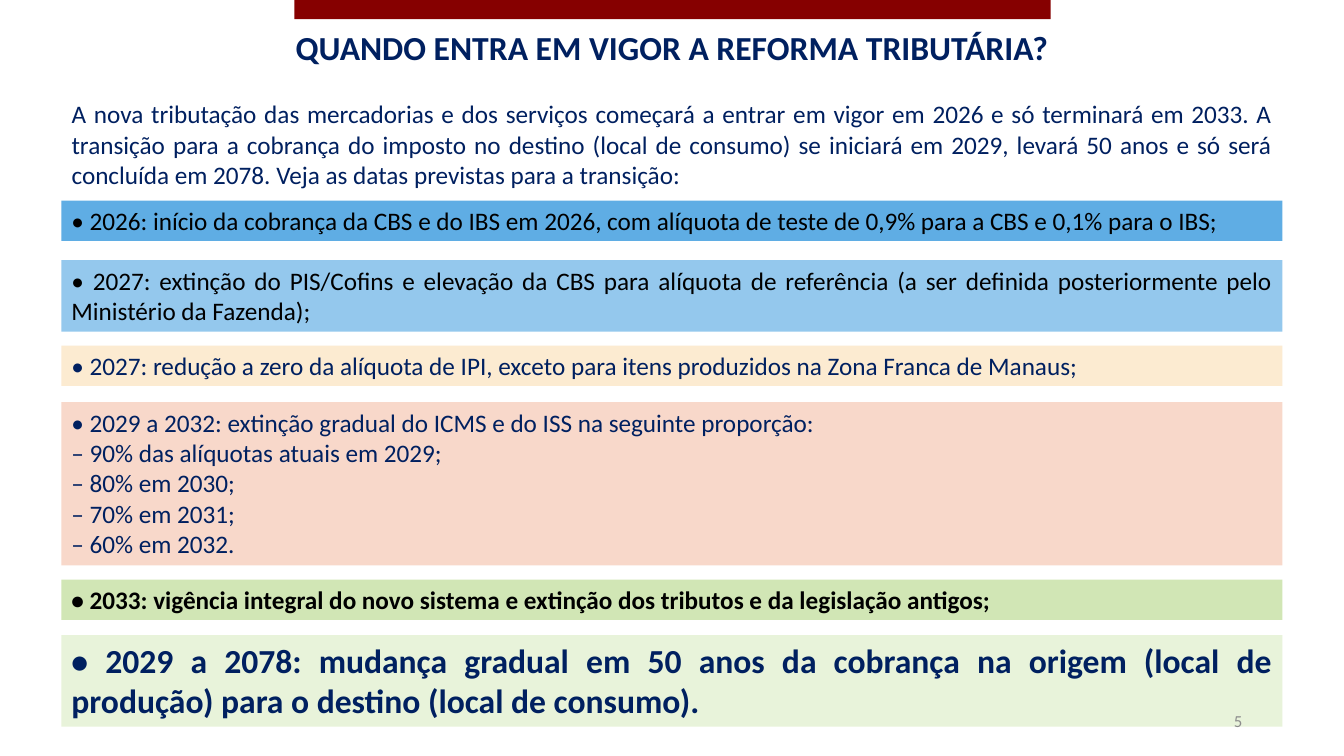
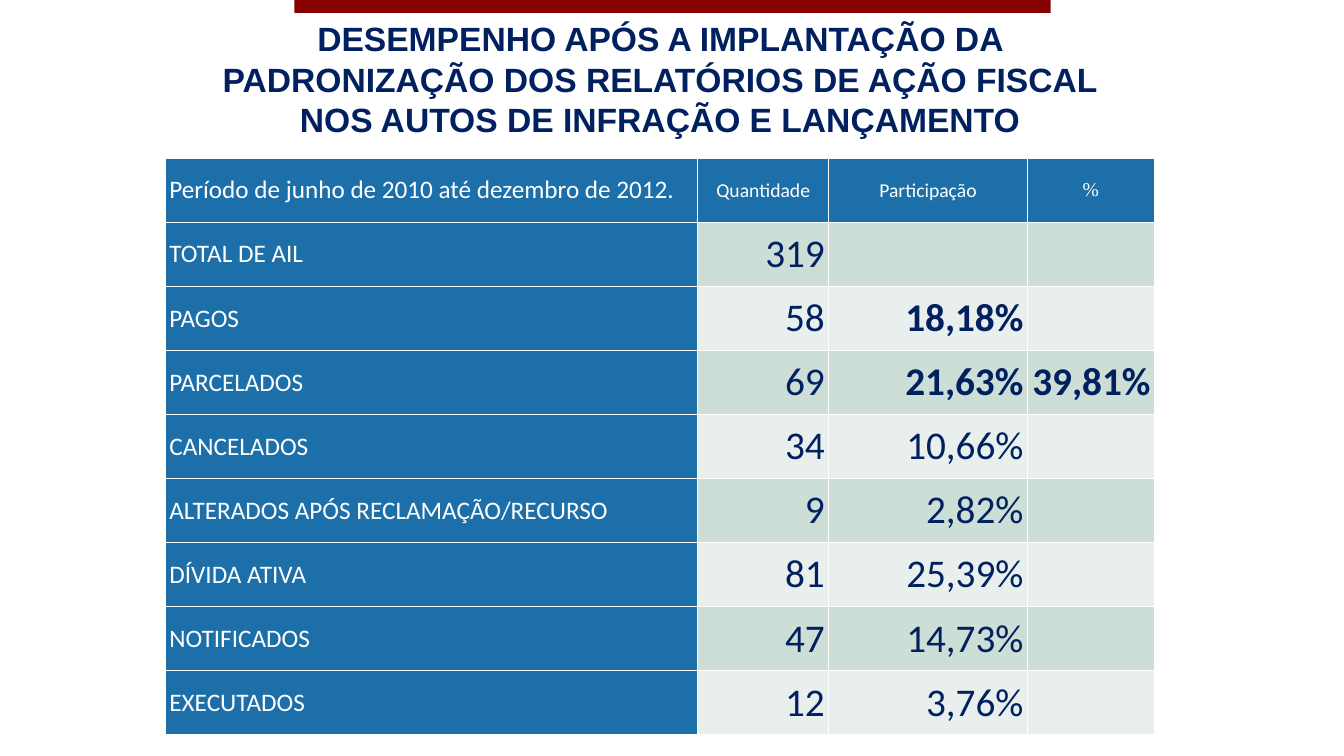
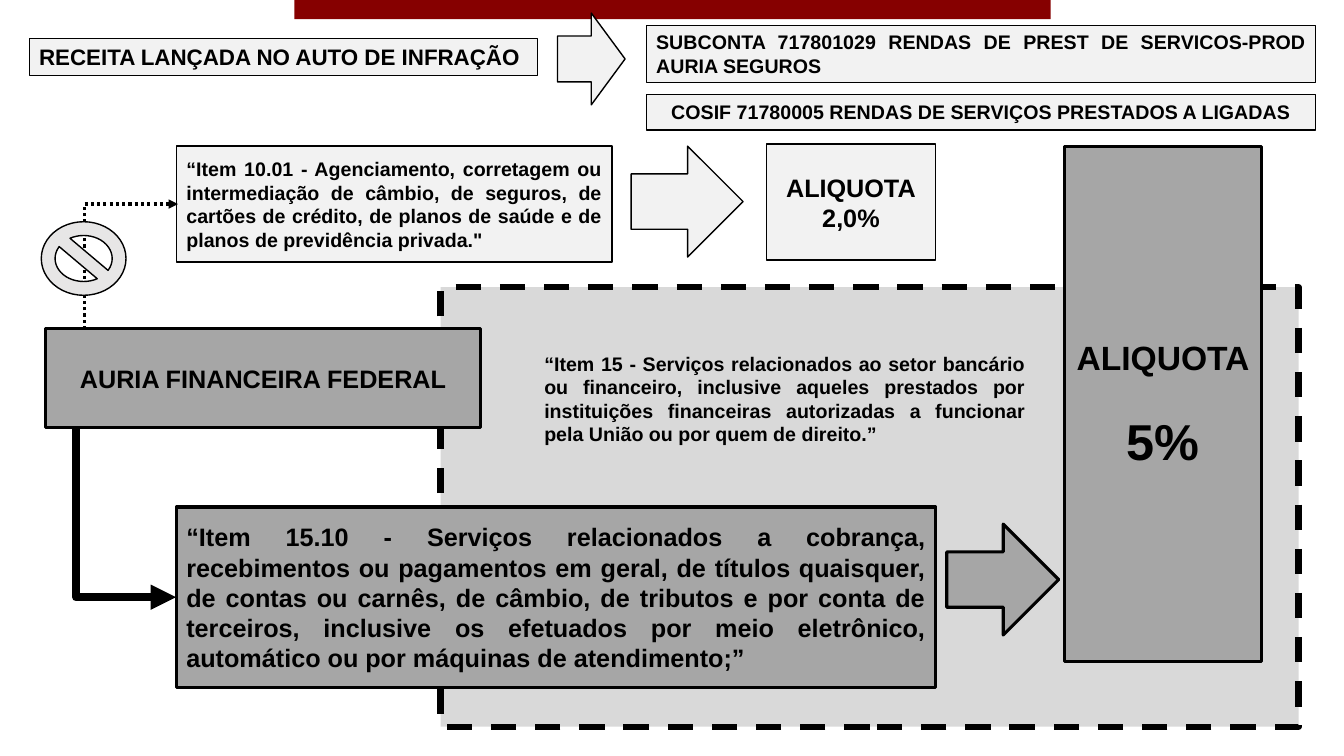
from lxml import etree
from pptx import Presentation
from pptx.dml.color import RGBColor
from pptx.enum.dml import MSO_LINE
from pptx.enum.shapes import MSO_CONNECTOR, MSO_SHAPE
from pptx.enum.text import MSO_ANCHOR, MSO_AUTO_SIZE, PP_ALIGN
from pptx.oxml.ns import qn
from pptx.util import Inches, Pt

LEFT, CENTER, RIGHT, JUSTIFY = PP_ALIGN.LEFT, PP_ALIGN.CENTER, PP_ALIGN.RIGHT, PP_ALIGN.JUSTIFY
TOP, MIDDLE = MSO_ANCHOR.TOP, MSO_ANCHOR.MIDDLE
RECTANGLE, ARROW, NO_SYMBOL = MSO_SHAPE.RECTANGLE, MSO_SHAPE.RIGHT_ARROW, MSO_SHAPE.NO_SYMBOL
ELBOW = MSO_CONNECTOR.ELBOW
DASH, DOTTED = MSO_LINE.DASH, MSO_LINE.ROUND_DOT

# Shared look
MAROON, NAVY, BLACK, WHITE = "860000", "002060", "000000", "FFFFFF"
BLUE, SAGE, PALE_SAGE = "1D6FA9", "CDDED6", "E8EFEC"
LIGHT, PANEL, DARK, SIGN = "F2F2F2", "D9D9D9", "A6A6A6", "E7E6E6"
rgb = RGBColor.from_string


def add_box(slide, kind, place, fill, line_width=None):
    shape = slide.shapes.add_shape(kind, *[Inches(value) for value in place])
    shape.shadow.inherit = False
    shape.fill.solid()
    shape.fill.fore_color.rgb = rgb(fill)
    if line_width:
        shape.line.color.rgb = rgb(BLACK)
        shape.line.width = Pt(line_width)
    else:
        shape.line.fill.background()
    return shape


def write(frame, lines, size, color, font="Calibri", bold=False, align=JUSTIFY, anchor=TOP):
    frame.word_wrap = True
    frame.vertical_anchor = anchor
    for number, line in enumerate(lines):
        paragraph = frame.add_paragraph() if number else frame.paragraphs[0]
        paragraph.alignment = align
        run = paragraph.add_run()
        run.text = line
        run.font.name = font
        run.font.size = Pt(size)
        run.font.bold = bold
        run.font.color.rgb = rgb(color)


presentation = Presentation()
presentation.slide_width, presentation.slide_height = Inches(13.33), Inches(7.5)
layouts = presentation.slide_layouts
dates_slide = presentation.slides.add_slide(layouts[1])
results_slide = presentation.slides.add_slide(layouts[5])
diagram_slide = presentation.slides.add_slide(layouts[6])

# Top band, moved to the master so that every slide shows it
top_band = add_box(dates_slide, RECTANGLE, (2.92, 0, 7.5, 0.19), MAROON)
presentation.slide_master.element.cSld.spTree.insert(2, top_band.element)

# Titles
for slide, title_text, font, place in [
    (dates_slide, "QUANDO ENTRA EM VIGOR A REFORMA TRIBUTÁRIA?", "Calibri", (0.61, 0.22, 12.11, 0.51)),
    (results_slide, "DESEMPENHO APÓS A IMPLANTAÇÃO DA PADRONIZAÇÃO DOS RELATÓRIOS DE AÇÃO FISCAL "
     "NOS AUTOS DE INFRAÇÃO E LANÇAMENTO", "Arial", (1.94, 0.13, 9.21, 1.31)),
]:
    title = slide.shapes.title
    title.left, title.top, title.width, title.height = [Inches(value) for value in place]
    title.fill.solid()
    title.fill.fore_color.rgb = rgb(WHITE)
    title.text_frame.auto_size = MSO_AUTO_SIZE.NONE
    write(title.text_frame, [title_text], 24, NAVY, font, True, CENTER)

# Slide 1: introduction
intro = dates_slide.placeholders[1]
intro.left, intro.top, intro.width, intro.height = [Inches(value) for value in (0.61, 0.93, 12.11, 1.02)]
intro.text_frame.auto_size = MSO_AUTO_SIZE.NONE
properties = intro.text_frame.paragraphs[0]._p.get_or_add_pPr()
properties.set("marL", "0")
properties.set("indent", "0")
etree.SubElement(properties, qn("a:buNone"))
write(intro.text_frame, [
    "A nova tributação das mercadorias e dos serviços começará a entrar em vigor em 2026 e só terminará "
    "em 2033. A transição para a cobrança do imposto no destino (local de consumo) se iniciará em 2029, "
    "levará 50 anos e só será concluída em 2078. Veja as datas previstas para a transição:"], 18, NAVY)
intro.text_frame.paragraphs[0].space_before = Pt(0)

# Slide 1: one coloured band per date
for top, height, fill, color, size, bold, lines in [
    (1.99, 0.4, "5FADE4", BLACK, 18, False, [
        "• 2026: início da cobrança da CBS e do IBS em 2026, com alíquota de teste de 0,9% para a CBS "
        "e 0,1% para o IBS;"]),
    (2.58, 0.71, "94C8ED", BLACK, 18, False, [
        "• 2027: extinção do PIS/Cofins e elevação da CBS para alíquota de referência (a ser definida "
        "posteriormente pelo Ministério da Fazenda);"]),
    (3.43, 0.4, "FCEBD1", NAVY, 18, False, [
        "• 2027: redução a zero da alíquota de IPI, exceto para itens produzidos na Zona Franca de Manaus;"]),
    (3.99, 1.62, "F8D8CA", NAVY, 18, False, [
        "• 2029 a 2032: extinção gradual do ICMS e do ISS na seguinte proporção:",
        "– 90% das alíquotas atuais em 2029;",
        "– 80% em 2030;",
        "– 70% em 2031;",
        "– 60% em 2032."]),
    (5.75, 0.4, "D1E6B5", BLACK, 18, True, [
        "• 2033: vigência integral do novo sistema e extinção dos tributos e da legislação antigos;"]),
    (6.3, 0.91, "E8F3DA", NAVY, 24, True, [
        "• 2029 a 2078: mudança gradual em 50 anos da cobrança na origem (local de produção) para o "
        "destino (local de consumo)."]),
]:
    date_band = add_box(dates_slide, RECTANGLE, (0.61, top, 12.11, height), fill)
    write(date_band.text_frame, lines, size, color, bold=bold)

page_number = dates_slide.shapes.add_textbox(Inches(9.42), Inches(6.95), Inches(3), Inches(0.4))
write(page_number.text_frame, ["5"], 12, "8C8C8C", align=RIGHT, anchor=MIDDLE)

# Slide 2: results table
rows = [
    ("Período de junho de 2010 até dezembro de 2012.", "Quantidade", "Participação", "%"),
    ("TOTAL DE AIL", "319", "", ""),
    ("PAGOS", "58", "18,18%", ""),
    ("PARCELADOS", "69", "21,63%", "39,81%"),
    ("CANCELADOS", "34", "10,66%", ""),
    ("ALTERADOS APÓS RECLAMAÇÃO/RECURSO", "9", "2,82%", ""),
    ("DÍVIDA ATIVA", "81", "25,39%", ""),
    ("NOTIFICADOS", "47", "14,73%", ""),
    ("EXECUTADOS", "12", "3,76%", ""),
]
highlights = {"18,18%", "21,63%", "39,81%"}
table = results_slide.shapes.add_table(
    len(rows), 4, Inches(1.64), Inches(1.57), Inches(9.81), Inches(5.72)).table
for column, width in zip(table.columns, (5.28, 1.3, 1.97, 1.26)):
    column.width = Inches(width)
for row_index, values in enumerate(rows):
    for column_index, value in enumerate(values):
        cell = table.cell(row_index, column_index)
        cell.margin_left = cell.margin_right = Inches(0.04)
        cell.margin_top = cell.margin_bottom = 0
        cell.vertical_anchor = MIDDLE
        if column_index == 0:
            fill, color, size, align = BLUE, WHITE, 18, LEFT
        elif row_index == 0:
            fill, color, size, align = BLUE, WHITE, 14, CENTER
        else:
            fill = SAGE if row_index % 2 else PALE_SAGE
            color, size, align = NAVY, 28, RIGHT
        cell.fill.solid()
        cell.fill.fore_color.rgb = rgb(fill)
        if value:
            font = "Times New Roman" if value == "%" else "Calibri"
            write(cell.text_frame, [value], size, color, font, value in highlights, align, MIDDLE)

# Slide 3: dashed panel and block arrows
panel = add_box(diagram_slide, RECTANGLE, (4.37, 2.85, 8.51, 4.36), PANEL, 4.5)
panel.line.dash_style = DASH
for place, fill, line_width in [
    ((9.39, 5.2, 1.11, 1.1), DARK, 2.25),
    ((6.26, 1.45, 1.11, 1.1), LIGHT, 1),
    ((5.53, 0.13, 0.67, 0.91), LIGHT, 1),
]:
    add_box(diagram_slide, ARROW, place, fill, line_width)

# Slide 3: text boxes
for place, fill, line_width, size, align, anchor, lines in [
    ((1.75, 1.45, 4.32, 1.15), LIGHT, 1, 14, JUSTIFY, MIDDLE, [
        "“Item 10.01 - Agenciamento, corretagem ou intermediação de câmbio, de seguros, de cartões de "
        "crédito, de planos de saúde e de planos de previdência privada.\""]),
    ((1.75, 5.03, 7.53, 1.79), DARK, 2.25, 18, JUSTIFY, MIDDLE, [
        "“Item 15.10 - Serviços relacionados a cobrança, recebimentos ou pagamentos em geral, de títulos "
        "quaisquer, de contas ou carnês, de câmbio, de tributos e por conta de terceiros, inclusive os "
        "efetuados por meio eletrônico, automático ou por máquinas de atendimento;”"]),
    ((7.6, 1.43, 1.68, 1.15), LIGHT, 1, 18, CENTER, MIDDLE, ["ALIQUOTA", "2,0%"]),
    ((6.41, 0.25, 6.64, 0.57), LIGHT, 0.75, 14, JUSTIFY, TOP, [
        "SUBCONTA 717801029 RENDAS DE PREST DE SERVICOS-PROD AURIA SEGUROS"]),
    ((6.41, 0.94, 6.64, 0.35), LIGHT, 0.75, 14, CENTER, TOP, [
        "COSIF 71780005 RENDAS DE SERVIÇOS PRESTADOS A LIGADAS"]),
    ((0.29, 0.38, 5.04, 0.37), LIGHT, 0.75, 16, JUSTIFY, TOP, ["RECEITA LANÇADA NO AUTO DE INFRAÇÃO"]),
    ((0.45, 3.26, 4.32, 0.98), DARK, 2.25, 18, CENTER, MIDDLE, ["AURIA FINANCEIRA FEDERAL"]),
]:
    box = add_box(diagram_slide, RECTANGLE, place, fill, line_width)
    write(box.text_frame, lines, size, BLACK, "Arial", True, align, anchor)

rate_box = add_box(diagram_slide, RECTANGLE, (10.56, 1.45, 1.95, 5.11), DARK, 2.25)
write(rate_box.text_frame, ["ALIQUOTA", "5%"], 24, BLACK, "Arial", True, CENTER, MIDDLE)
rate = rate_box.text_frame.paragraphs[1]
rate.space_before = Pt(23)
rate.runs[0].font.size = Pt(36)

item_15 = diagram_slide.shapes.add_textbox(Inches(5.3), Inches(3.43), Inches(4.97), Inches(1.05))
write(item_15.text_frame, [
    "“Item 15 - Serviços relacionados ao setor bancário ou financeiro, inclusive aqueles prestados por "
    "instituições financeiras autorizadas a funcionar pela União ou por quem de direito.”"],
    14, BLACK, "Arial", True, JUSTIFY, MIDDLE)

# Slide 3: one-bend connectors, given by their ends before rotation
for ends, degrees, line_width, dash in [
    ((2.09, 4.59, 0.41, 5.58), 270, 6, None),
    ((1.92, 3.11, 0.68, 2.18), 90, 2.25, DOTTED),
]:
    connector = diagram_slide.shapes.add_connector(ELBOW, *[Inches(value) for value in ends])
    connector.line.color.rgb = rgb(BLACK)
    connector.line.width = Pt(line_width)
    if dash:
        connector.line.dash_style = dash
    connector_properties = connector.element.spPr
    connector_properties.find(qn("a:xfrm")).set("rot", str(degrees * 60000))
    connector_properties.find(qn("a:prstGeom")).set("prst", "bentConnector2")
    etree.SubElement(connector_properties.find(qn("a:ln")), qn("a:tailEnd"), type="triangle")
    etree.SubElement(connector_properties, qn("a:effectLst"))

add_box(diagram_slide, NO_SYMBOL, (0.41, 2.2, 0.84, 0.73), SIGN, 1)

presentation.save("out.pptx")
